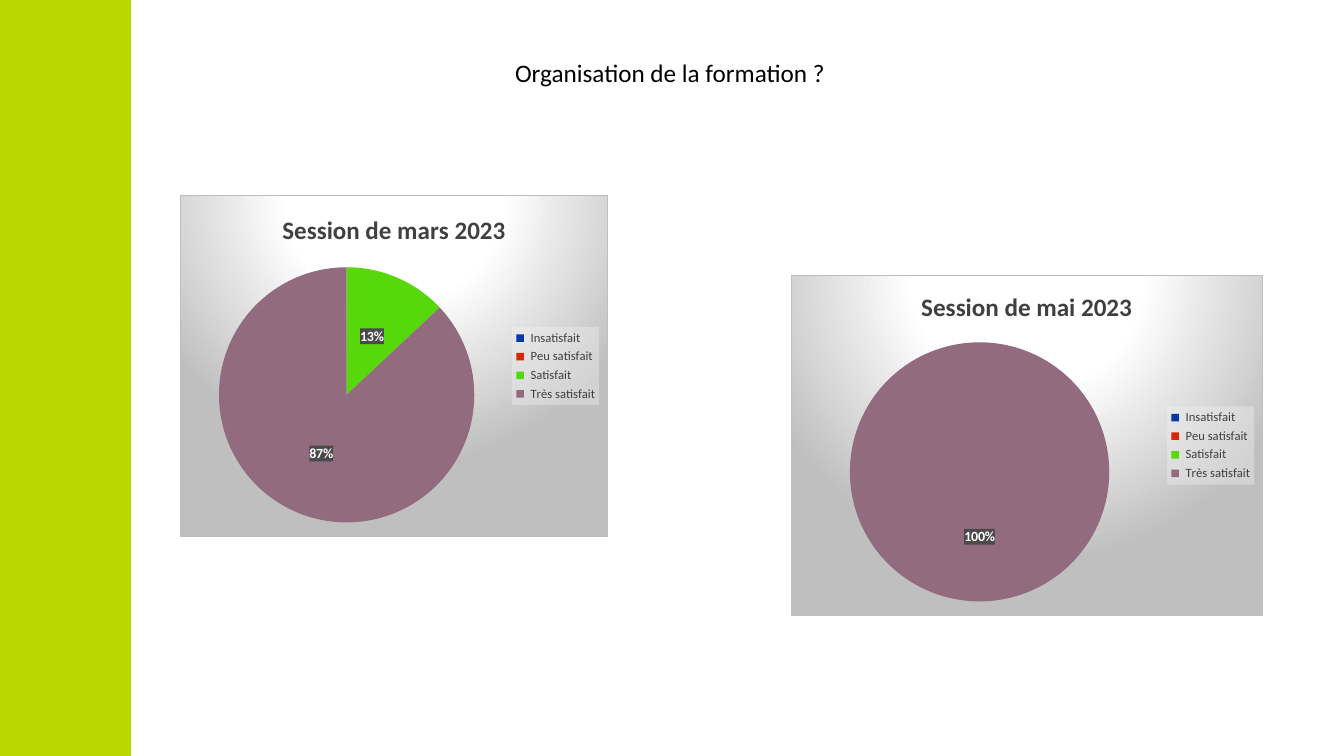
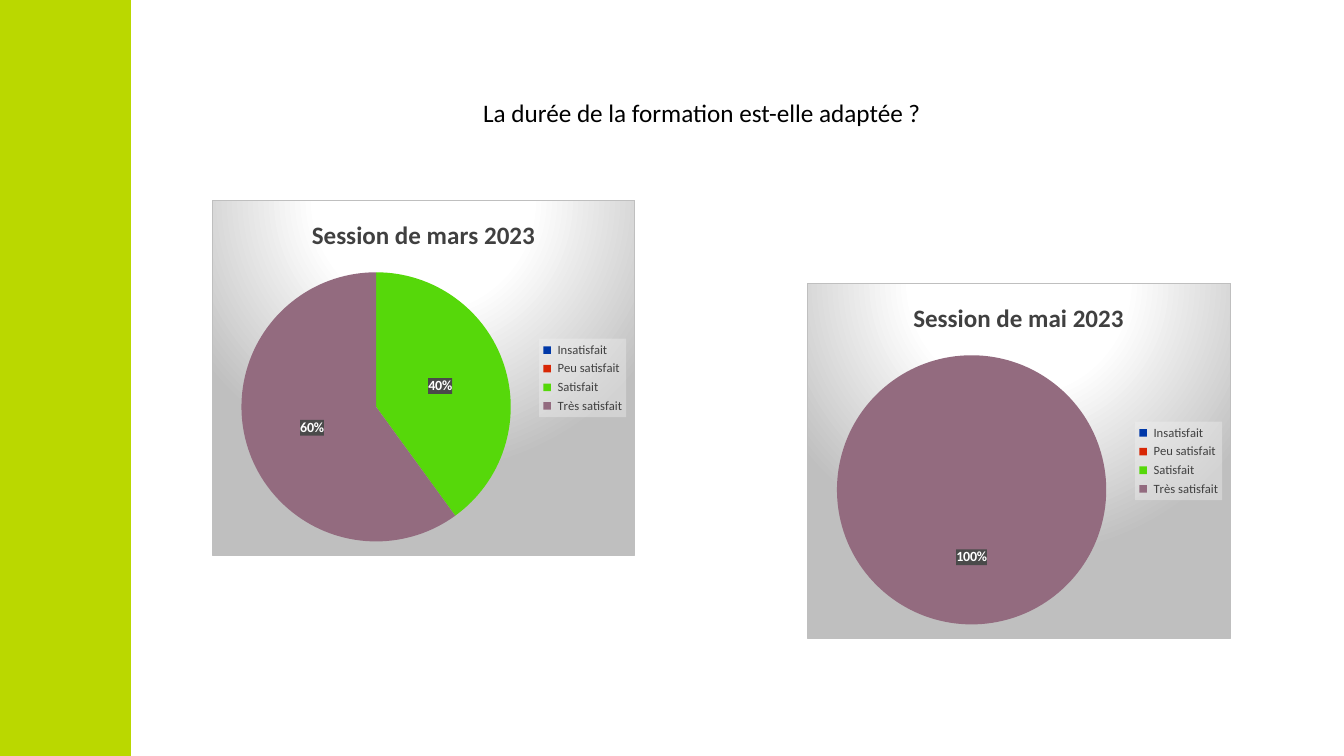
from dataclasses import dataclass

from lxml.etree import fromstring
from pptx import Presentation
from pptx.chart.data import CategoryChartData
from pptx.dml.color import RGBColor
from pptx.enum.chart import XL_CHART_TYPE, XL_LABEL_POSITION, XL_LEGEND_POSITION
from pptx.enum.shapes import MSO_SHAPE
from pptx.enum.text import MSO_ANCHOR, MSO_AUTO_SIZE, PP_ALIGN
from pptx.oxml.ns import nsdecls, qn
from pptx.util import Emu, Pt

PAGE_WIDTH, PAGE_HEIGHT, BAND_WIDTH = 1344, 756, 131
LEGEND_SPACE = 95
PIE_BOTTOM_GAP = 14
TITLE_ONLY_LAYOUT = 5


@dataclass(frozen=True)
class Theme:
    font: str = "Calibri"
    band: str = "BAD800"
    black: str = "000000"
    white: str = "FFFFFF"
    grey_text: str = "404040"
    label_box: str = "4A4A4A"
    legend_box: str = "F2F2F2"
    panel_edge: str = "BFBFBF"
    slices: tuple = ("0038A8", "D82705", "56D80A", "936B7F")
    title_size: int = 18
    chart_size: int = 10
    legend_size: int = 9


@dataclass(frozen=True)
class Box:
    left: int
    top: int
    width: int
    height: int

    def emu(self):
        return [px(side) for side in (self.left, self.top, self.width, self.height)]


@dataclass(frozen=True)
class Session:
    name: str
    name_width: int
    values: tuple
    box: Box
    name_top: int = 12
    pie_top: int = 72


THEME = Theme()
CATEGORIES = (" Insatisfait", " Peu satisfait", " Satisfait", " Très satisfait")
MARCH = ("Session de mars 2023", 233)
MAY = ("Session de mai 2023", 221)
QUESTIONS = (
    ("Organisation de la formation ?", Box(505, 52, 334, 40), (
        Session(*MARCH, (0, 0, 13, 87), Box(180, 195, 428, 342)),
        Session(*MAY, (0, 0, 0, 100), Box(791, 275, 472, 341), name_top=9, pie_top=67),
    )),
    ("La durée de la formation est-elle adaptée ?", Box(473, 92, 465, 40), (
        Session(*MARCH, (0, 0, 40, 60), Box(212, 200, 423, 356)),
        Session(*MAY, (0, 0, 0, 100), Box(807, 283, 424, 356)),
    )),
)


def px(length):
    return Emu(round(length * 914400 / 100.8))


def style_font(font, size, color, bold=False):
    for name, value in {"name": THEME.font, "size": Pt(size), "bold": bold}.items():
        setattr(font, name, value)
    font.color.rgb = RGBColor.from_string(color)


def fill_solid(fill, color):
    fill.solid()
    fill.fore_color.rgb = RGBColor.from_string(color)


def chart_xml(tag, content):
    return fromstring(f"<c:{tag} {nsdecls('c', 'a')}>{content}</c:{tag}>")


def solid_box(color, opacity=100):
    return chart_xml("spPr", f'<a:solidFill><a:srgbClr val="{color}">'
                     f'<a:alpha val="{opacity * 1000}"/></a:srgbClr></a:solidFill>')


def gradient_panel():
    stops = "".join(
        f'<a:gs pos="{position * 1000}"><a:srgbClr val="{color}"/></a:gs>'
        for position, color in ((0, THEME.white), (39, THEME.white), (100, THEME.panel_edge)))
    return chart_xml(
        "spPr",
        f'<a:gradFill><a:gsLst>{stops}</a:gsLst><a:path path="circle">'
        '<a:fillToRect l="50000" t="-80000" r="50000" b="180000"/></a:path></a:gradFill>'
        f'<a:ln w="{Pt(0.75)}"><a:solidFill><a:srgbClr val="{THEME.panel_edge}"/>'
        '</a:solidFill></a:ln>')


def manual_layout(fractions, target=""):
    modes = "".join(f'<c:{axis}Mode val="edge"/>' for axis in "xy")
    values = "".join(f'<c:{name} val="{value:.4f}"/>' for name, value in fractions.items())
    return chart_xml("layout", f"<c:manualLayout>{target}{modes}{values}</c:manualLayout>")


def set_layout(parent, position, layout):
    for old in parent.findall(qn("c:layout")):
        parent.remove(old)
    parent.insert(position, layout)


def place_name(chart, session):
    frame = chart.chart_title.text_frame
    frame.text = session.name
    style_font(frame.paragraphs[0].runs[0].font, THEME.title_size, THEME.grey_text, True)
    box = session.box
    set_layout(chart.chart_title.element, 1, manual_layout({
        "x": (box.width - session.name_width) / 2 / box.width,
        "y": session.name_top / box.height}))


def place_pie(chart, session):
    """Centre the pie in the space left of the legend."""
    box = session.box
    diameter = box.height - session.pie_top - PIE_BOTTOM_GAP
    left = (box.width - LEGEND_SPACE - diameter) / 2
    plot_area = chart.element.find(".//" + qn("c:plotArea"))
    set_layout(plot_area, 0, manual_layout({
        "x": left / box.width, "y": session.pie_top / box.height,
        "w": diameter / box.width, "h": diameter / box.height},
        '<c:layoutTarget val="inner"/>'))


def style_slices(chart, values):
    """Colour the slices and label those that are not zero."""
    series = chart.plots[0].series[0]
    for index, color in enumerate(THEME.slices):
        fill_solid(series.points[index].format.fill, color)
    labels = series.data_labels
    settings = {"show_percentage": True, "show_value": False, "number_format": "0%",
                "number_format_is_linked": False, "position": XL_LABEL_POSITION.CENTER}
    for name, value in settings.items():
        setattr(labels, name, value)
    style_font(labels.font, THEME.chart_size, THEME.white, True)
    element = chart.element.find(".//" + qn("c:ser") + "/" + qn("c:dLbls"))
    element.find(qn("c:txPr")).addprevious(solid_box(THEME.label_box))
    empty = [index for index, value in enumerate(values) if value == 0]
    for position, index in enumerate(empty):
        element.insert(position, chart_xml(
            "dLbl", f'<c:idx val="{index}"/><c:delete val="1"/>'))


def style_legend(chart):
    chart.has_legend = True
    legend = chart.legend
    legend.position = XL_LEGEND_POSITION.RIGHT
    legend.include_in_layout = False
    style_font(legend.font, THEME.legend_size, THEME.grey_text)
    text = chart.element.find(".//" + qn("c:legend") + "/" + qn("c:txPr"))
    text.addprevious(solid_box(THEME.legend_box, 39))


def add_session_chart(page, session):
    data = CategoryChartData()
    data.categories = CATEGORIES
    data.add_series("Series 1", session.values)
    chart = page.shapes.add_chart(XL_CHART_TYPE.PIE, *session.box.emu(), data).chart
    style_font(chart.font, THEME.chart_size, THEME.black)
    chart.has_title = True
    chart.plots[0].vary_by_categories = True
    place_name(chart, session)
    place_pie(chart, session)
    style_slices(chart, session.values)
    style_legend(chart)
    chart.element.find(qn("c:chart")).addnext(gradient_panel())


def add_band(page):
    band = page.shapes.add_shape(
        MSO_SHAPE.RECTANGLE, *Box(0, 0, BAND_WIDTH, PAGE_HEIGHT).emu())
    band.shadow.inherit = False
    fill_solid(band.fill, THEME.band)
    band.line.fill.background()


def place_title(page, question, box):
    title = page.shapes.title
    title.left, title.top, title.width, title.height = box.emu()
    frame = title.text_frame
    frame.text = question
    settings = {"word_wrap": True, "auto_size": MSO_AUTO_SIZE.NONE,
                "vertical_anchor": MSO_ANCHOR.TOP}
    for name, value in settings.items():
        setattr(frame, name, value)
    para = frame.paragraphs[0]
    para.alignment = PP_ALIGN.LEFT
    style_font(para.runs[0].font, THEME.title_size, THEME.black)


def add_question(deck, question, title_box, sessions):
    page = deck.slides.add_slide(deck.slide_layouts[TITLE_ONLY_LAYOUT])
    add_band(page)
    place_title(page, question, title_box)
    for session in sessions:
        add_session_chart(page, session)


def main():
    deck = Presentation()
    deck.slide_width, deck.slide_height = px(PAGE_WIDTH), px(PAGE_HEIGHT)
    for question in QUESTIONS:
        add_question(deck, *question)
    deck.save("out.pptx")


if __name__ == "__main__":
    main()
